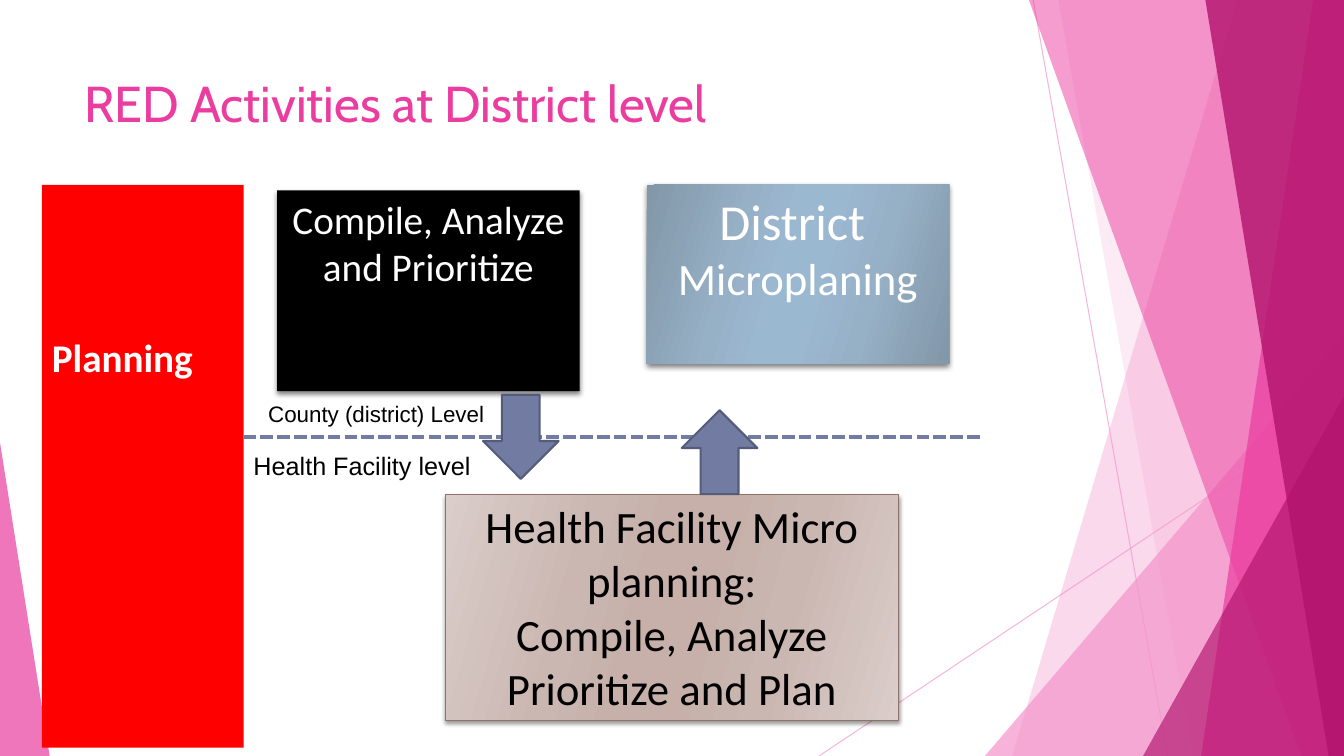
from lxml import etree
from pptx import Presentation
from pptx.dml.color import RGBColor
from pptx.enum.dml import MSO_LINE
from pptx.enum.shapes import MSO_CONNECTOR, MSO_SHAPE
from pptx.enum.text import MSO_ANCHOR, PP_ALIGN
from pptx.oxml.ns import qn
from pptx.util import Pt

RECT, TRIANGLE = MSO_SHAPE.RECTANGLE, MSO_SHAPE.ISOSCELES_TRIANGLE
UP, DOWN = MSO_SHAPE.UP_ARROW, MSO_SHAPE.DOWN_ARROW
LEFT, CENTER = PP_ALIGN.LEFT, PP_ALIGN.CENTER
W, H = 960, 540
PALE, PINK, DEEP = "F496CB", "EB3D9F", "B2136D"
SLATE, SLATE_EDGE = "727CA3", "545C79"
STOPS = (0, 30, 45, 55, 73, 100)

# Background: hairlines, then facets from back to front
HAIRLINES = [(738, 0, 834, H), (W, 290, 585, H)]
# Bands run to the right edge: top x, bottom x, colour, opacity
BACK_BANDS = [(884, 723, PALE, 36), (756, 852, PALE, 20)]
FRONT_BANDS = [(735, 929.5, PINK, 50), (938, 858, PINK, 70),
               (861, 949, DEEP, 80)]
# Triangles stand on the bottom edge: left, top, width, apex, colour, opacity
BACK_TRIANGLES = [(703.5, 240, 256.5, 1, PALE, 72)]
FRONT_TRIANGLES = [(816.5, 283, 143.5, 1, DEEP, 66),
                   (0, 316, 35.5, 0, PINK, 70)]

# Text: box, lines of (text, size), font, colour, alignment
TITLE = ((53, 48, 677, 104), [("RED Activities at District level", 36)],
         "Cabin", PINK, LEFT)
LABELS = [
    ((184.5, 282.5, 188, 27), [("County (district) Level", 16)],
     "Arial", "000000", LEFT),
    ((174, 318, 210, 29), [("Health Facility level", 18)],
     "Arial", "000000", LEFT),
]
# Boxes: box, lines, text colour, fill colours, edge, shadow (opacity, blur)
BOXES = [
    ((198, 136, 216, 143.5), [("Compile, Analyze and Prioritize", 28)],
     "FFFFFF", ["000000"], None, (50, 4)),
    ((318, 353, 324, 161.5), [("Health Facility Micro planning:", 32),
                              ("Compile, Analyze Prioritize and Plan", 32)],
     "000000", ["DACDCA", "CBB7B2", "C6B0A9"], "8E736A", (40, 3)),
    ((462, 132, 216, 128), [("District ", 36), ("Microplaning", 32)],
     "FFFFFF", ["8297A8", "96B0C6", "9BB8D1"], None, (50, 4)),
]
PLANNING_BOX = (30, 132, 144, 402)
DIVIDER = (174, 312, 702, 312)
ARROWS = [(DOWN, (345, 282, 54, 60)), (UP, (487, 293, 54, 60))]


def rgb(value):
    return RGBColor.from_string(value)


def points(values):
    return [Pt(v) for v in values]


def sub(parent, tag, **attrs):
    return etree.SubElement(parent, qn(tag), attrs)


def set_alpha(sp, percent):
    color = sp._element.spPr.find(".//" + qn("a:srgbClr"))
    sub(color, "a:alpha", val=str(percent * 1000))


def style(sp, fill, edge=None, width=0.75):
    sp.shadow.inherit = False
    sp.fill.solid()
    sp.fill.fore_color.rgb = rgb(fill)
    if edge:
        sp.line.color.rgb = rgb(edge)
        sp.line.width = Pt(width)
    else:
        sp.line.fill.background()


def add_shape(kind, box, fill, edge=None, width=0.75):
    sp = shapes.add_shape(kind, *points(box))
    style(sp, fill, edge, width)
    return sp


def add_line(ends, color, width):
    line = shapes.add_connector(MSO_CONNECTOR.STRAIGHT, *points(ends))
    line.line.color.rgb = rgb(color)
    line.line.width = Pt(width)
    sub(line._element.spPr, "a:effectLst")
    return line


def add_band(top, bottom, color, opacity):
    outline = shapes.build_freeform(Pt(top), 0)
    outline.add_line_segments([points(xy) for xy in
                               ((W, 0), (W, H), (bottom, H))])
    sp = outline.convert_to_shape()
    style(sp, color)
    set_alpha(sp, opacity)


def add_triangle(left, top, width, apex, color, opacity):
    sp = add_shape(TRIANGLE, (left, top, width, H - top), color)
    sp.adjustments[0] = apex
    set_alpha(sp, opacity)


def write(sp, lines, font, color, align):
    tf = sp.text_frame
    tf.word_wrap = True
    tf.vertical_anchor = MSO_ANCHOR.TOP
    for i, (text, size) in enumerate(lines):
        p = tf.paragraphs[0] if i == 0 else tf.add_paragraph()
        p.text = text
        p.alignment = align
        p.font.size = Pt(size)
        f = p.runs[0].font
        f.name, f.size, f.color.rgb = font, Pt(size), rgb(color)
    return tf


def add_text(box, *text):
    write(shapes.add_textbox(*points(box)), *text)


def set_gradient(sp, outer, middle, inner):
    sp.fill.gradient()
    sp.fill.gradient_angle = 344
    stops = sp._element.spPr.find(".//" + qn("a:gsLst"))
    for stop in list(stops):
        stops.remove(stop)
    colors = (outer, middle, inner, inner, middle, outer)
    for position, color in zip(STOPS, colors):
        stop = sub(stops, "a:gs", pos=str(position * 1000))
        sub(stop, "a:srgbClr", val=color)


def add_shadow(sp, opacity, blur):
    effects = sp._element.spPr.find(qn("a:effectLst"))
    shadow = sub(effects, "a:outerShdw", blurRad=str(Pt(blur)),
                 dist=str(Pt(2)), dir="5400000", rotWithShape="0")
    color = sub(shadow, "a:srgbClr", val="000000")
    sub(color, "a:alpha", val=str(opacity * 1000))


prs = Presentation()
prs.slide_width, prs.slide_height = Pt(W), Pt(H)
shapes = prs.slides.add_slide(prs.slide_layouts[6]).shapes

# Background facets
for ends in HAIRLINES:
    set_alpha(add_line(ends, PALE, 0.75), 70)
for bands, triangles in ((BACK_BANDS, BACK_TRIANGLES),
                         (FRONT_BANDS, FRONT_TRIANGLES)):
    for band in bands:
        add_band(*band)
    for triangle in triangles:
        add_triangle(*triangle)

# Title and planning column
add_text(*TITLE)
planning = add_shape(RECT, PLANNING_BOX, "FF0000")
tf = write(planning, [("Planning", 28)], "Calibri", "FFFFFF", LEFT)
tf.margin_top = Pt(118)
tf.paragraphs[0].line_spacing = Pt(22)
tf.paragraphs[0].runs[0].font.bold = True

# Activity boxes
for box, lines, color, fills, edge, shadow in BOXES:
    sp = add_shape(RECT, box, fills[0], edge)
    if len(fills) > 1:
        set_gradient(sp, *fills)
    add_shadow(sp, *shadow)
    write(sp, lines, "Calibri", color, CENTER)

# Level divider, arrows and labels
add_line(DIVIDER, SLATE, 3).line.dash_style = MSO_LINE.SQUARE_DOT
for kind, box in ARROWS:
    add_shape(kind, box, SLATE, SLATE_EDGE, 1.5)
for label in LABELS:
    add_text(*label)

prs.save("out.pptx")
